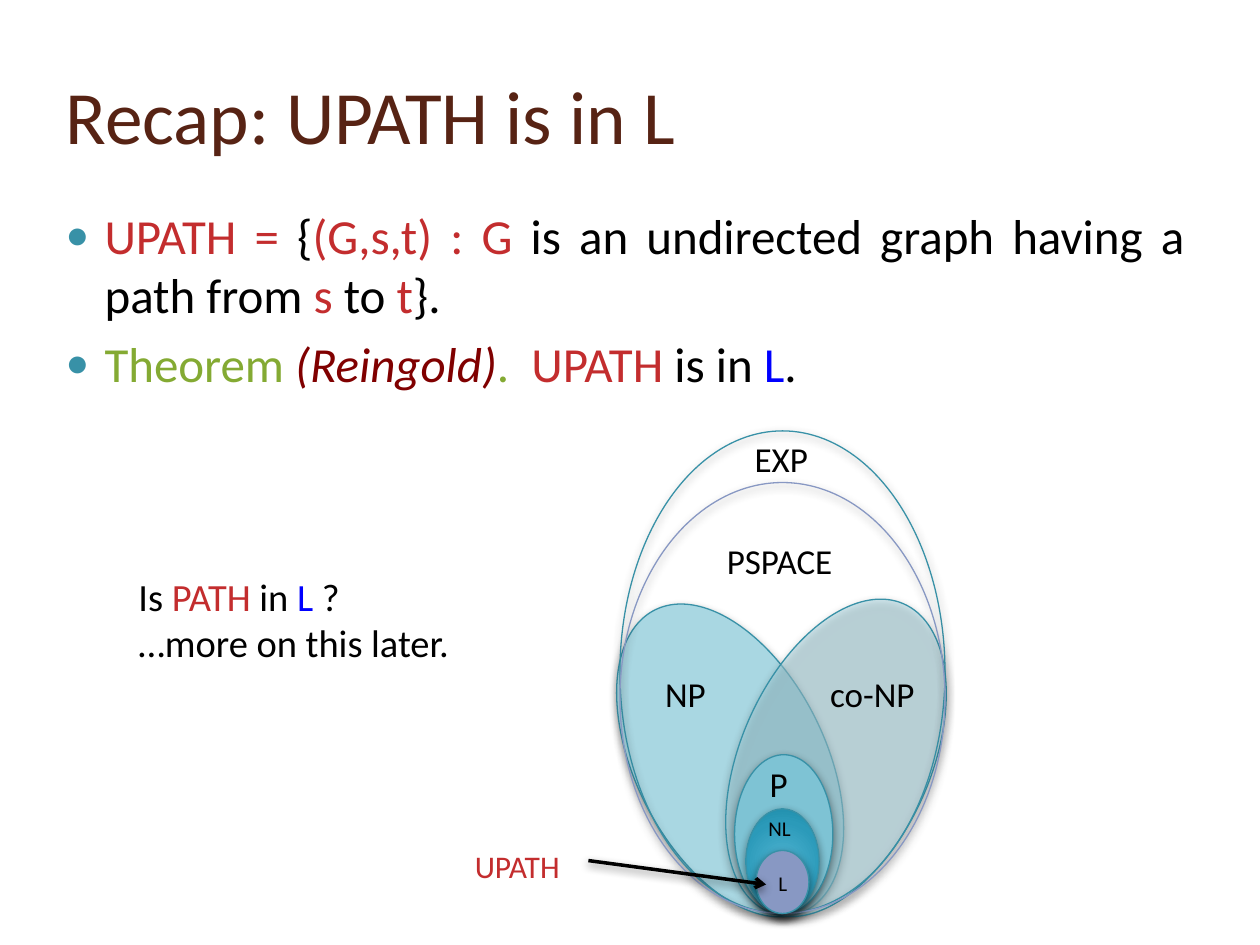
from typing import NamedTuple, Optional

from lxml.etree import SubElement
from pptx import Presentation
from pptx.dml.color import RGBColor
from pptx.enum.shapes import MSO_CONNECTOR, MSO_SHAPE
from pptx.enum.text import MSO_ANCHOR, MSO_AUTO_SIZE, PP_ALIGN
from pptx.oxml.ns import qn
from pptx.util import Emu, Pt

PX = 9144  # 100 px to the inch
FONT = "Calibri"
COLORS = {
    "title": "572314", "black": "000000", "red": "C32D2E", "green": "84AA33",
    "maroon": "800000", "blue": "0000FF", "teal": "3891A7", "violet": "8898C3",
    "pale": "A9D7E2", "aqua": "7EC3D4",
}
NL_STOPS = [(0, "45ACCC"), (15, "45ACCB"), (62, "2B9AB9"), (97, "1C8AA7"), (100, "0E89A7")]


class Box(NamedTuple):
    left: int
    top: int
    width: int
    height: int


class Span(NamedTuple):
    text: str
    color: str = "black"
    italic: bool = False


class Region(NamedTuple):
    box: Box
    fill: Optional[str] = None
    line: str = "teal"
    rotation: float = 0
    opacity: int = 100
    stops: Optional[list] = None


class Label(NamedTuple):
    box: Box
    lines: list
    size: int = 20


def emu(box):
    return [Emu(value * PX) for value in box]


def rgb(name: str) -> RGBColor:
    return RGBColor.from_string(COLORS[name])


def add_node(parent, tag: str, **attributes):
    return SubElement(parent, qn(tag), {key: str(value) for key, value in attributes.items()})


def write(para, spans: list, *, size: int) -> None:
    for item in spans:
        span = para.add_run()
        span.text = item.text
        span.font.name, span.font.size = FONT, Pt(size)
        span.font.color.rgb = rgb(item.color)
        if item.italic:
            span.font.italic = True


def place(shape, box: Box) -> None:
    shape.left, shape.top, shape.width, shape.height = emu(box)


def add_shadow(shape) -> None:
    properties = shape._element.spPr
    effects = properties.find(qn("a:effectLst"))
    if effects is None:
        effects = add_node(properties, "a:effectLst")
    shadow = add_node(effects, "a:outerShdw", blurRad=Pt(5), dist=Pt(2),
                      dir=5400000, rotWithShape=0)
    color = add_node(shadow, "a:srgbClr", val=COLORS["black"])
    add_node(color, "a:alpha", val=43000)


def fill_radial(shape, stops: list) -> None:
    shape.fill.gradient()
    gradient = shape._element.spPr.find(qn("a:gradFill"))
    for child in list(gradient):
        gradient.remove(child)
    stop_list = add_node(gradient, "a:gsLst")
    for position, color in stops:
        stop = add_node(stop_list, "a:gs", pos=position * 1000)
        add_node(stop, "a:srgbClr", val=color)
    route = add_node(gradient, "a:path", path="circle")
    add_node(route, "a:fillToRect", l=50000, t=50000, r=50000, b=50000)


def draw_region(page, region: Region) -> None:
    oval = page.shapes.add_shape(MSO_SHAPE.OVAL, *emu(region.box))
    oval.rotation = region.rotation
    if region.stops:
        fill_radial(oval, region.stops)
    elif region.fill:
        oval.fill.solid()
        oval.fill.fore_color.rgb = rgb(region.fill)
        if region.opacity < 100:
            color = oval._element.spPr.find(qn("a:solidFill"))[0]
            add_node(color, "a:alpha", val=region.opacity * 1000)
    else:
        oval.fill.background()
    oval.line.color.rgb = rgb(region.line)
    oval.line.width = Pt(0.75)
    oval.shadow.inherit = False
    add_shadow(oval)


def draw_label(page, label: Label) -> None:
    frame = page.shapes.add_textbox(*emu(label.box)).text_frame
    frame.word_wrap = True
    frame.auto_size = MSO_AUTO_SIZE.SHAPE_TO_FIT_TEXT
    for index, spans in enumerate(label.lines):
        para = frame.add_paragraph() if index else frame.paragraphs[0]
        write(para, spans, size=label.size)


def draw_arrow(page, start: tuple, end: tuple) -> None:
    arrow = page.shapes.add_connector(MSO_CONNECTOR.STRAIGHT, *emu(start + end))
    arrow.line.color.rgb = rgb("black")
    arrow.line.width = Pt(2)
    add_node(arrow.line._get_or_add_ln(), "a:tailEnd", type="arrow")
    add_shadow(arrow)


def format_bullet(para) -> None:
    para.alignment = PP_ALIGN.JUSTIFY
    para.space_before = Pt(6)
    properties = para._p.get_or_add_pPr()
    properties.set("marL", str(40 * PX))
    properties.set("indent", str(-31 * PX))
    color = add_node(properties, "a:buClr")
    add_node(color, "a:srgbClr", val=COLORS["teal"])
    add_node(properties, "a:buSzPct", val=80000)
    add_node(properties, "a:buChar", char="●")


BULLETS = [
    [Span("UPATH = ", "red"), Span("{"), Span("(G,s,t) : G ", "red"),
     Span("is an undirected graph having a path from"), Span(" s ", "red"),
     Span("to "), Span("t", "red"), Span("}.")],
    [Span("Theorem ", "green"), Span("(Reingold)", "maroon", True), Span(".  ", "green"),
     Span("UPATH ", "red"), Span("is in "), Span("L", "blue"), Span(".")],
]

# Complexity classes with their labels, back to front
DIAGRAM = [
    Region(Box(504, 470, 151, 267), "pale", rotation=333.5),
    Region(Box(588, 468, 151, 267), "pale", rotation=23.7, opacity=50),
    Region(Box(583, 599, 78, 126), "aqua"),
    Label(Box(518, 529, 60, 44), [[Span("NP")]]),
    Label(Box(649, 529, 112, 44), [[Span("co-NP")]]),
    Label(Box(601, 600, 60, 44), [[Span("P")]]),
    Region(Box(492, 342, 258, 383)),
    Label(Box(589, 342, 86, 44), [[Span("EXP")]]),
    Region(Box(492, 383, 258, 342), line="violet"),
    Label(Box(567, 423, 117, 44), [[Span("PSPACE")]]),
    Region(Box(592, 642, 58, 83), stops=NL_STOPS),
    Label(Box(600, 642, 42, 30), [[Span("NL")]], 12),
    Region(Box(600, 675, 42, 50), "violet"),
    Label(Box(608, 686, 25, 30), [[Span("L")]], 12),
]

REMARKS = [
    Label(Box(367, 667, 100, 40), [[Span("UPATH", "red")]], 18),
    Label(Box(100, 450, 325, 84),
          [[Span("Is "), Span("PATH", "red"), Span(" in "), Span("L", "blue"), Span(" ?")],
           [Span("…more on this later.")]], 22),
]


def main() -> None:
    deck = Presentation()
    deck.slide_width, deck.slide_height = Emu(1000 * PX), Emu(750 * PX)
    page = deck.slides.add_slide(deck.slide_layouts[1])

    # Title
    title = page.shapes.title
    place(title, Box(42, 33, 883, 115))
    title.text_frame.vertical_anchor = MSO_ANCHOR.MIDDLE
    title.text_frame.auto_size = MSO_AUTO_SIZE.NONE
    heading = title.text_frame.paragraphs[0]
    heading.alignment = PP_ALIGN.LEFT
    write(heading, [Span("Recap: UPATH is in L", "title")], size=43)

    # Bulleted statements
    body = page.placeholders[1]
    place(body, Box(33, 158, 917, 550))
    frame = body.text_frame
    frame.auto_size = MSO_AUTO_SIZE.NONE
    for index, spans in enumerate(BULLETS):
        para = frame.add_paragraph() if index else frame.paragraphs[0]
        format_bullet(para)
        write(para, spans, size=28)

    # Nested classes, arrow and remarks
    for part in DIAGRAM:
        draw = draw_region if isinstance(part, Region) else draw_label
        draw(page, part)
    draw_arrow(page, (467, 683), (608, 702))
    for remark in REMARKS:
        draw_label(page, remark)

    deck.save("out.pptx")


if __name__ == "__main__":
    main()
